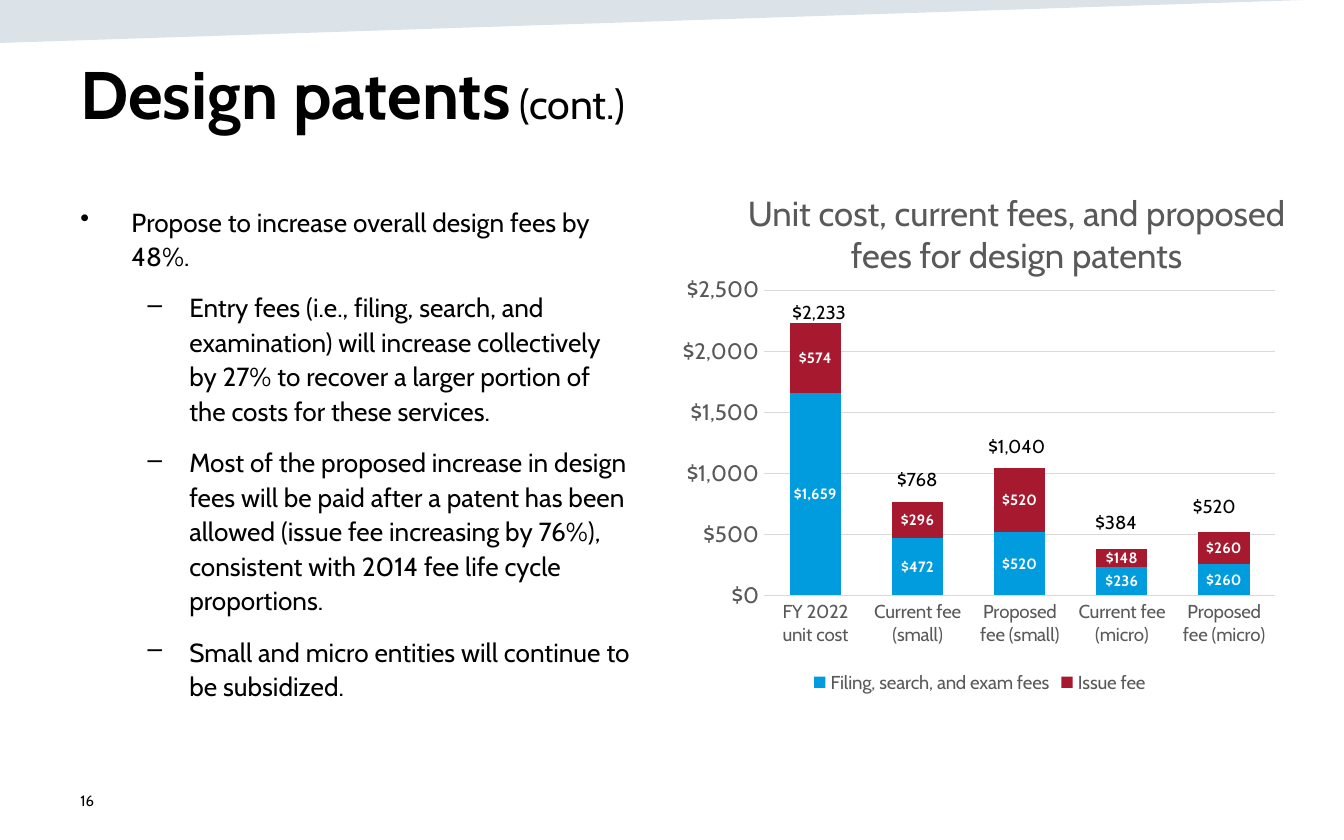
from dataclasses import dataclass

from lxml import etree
from pptx import Presentation
from pptx import util as u
from pptx.chart.data import CategoryChartData
from pptx.dml.color import RGBColor
from pptx.enum import chart as ch
from pptx.enum import text
from pptx.oxml import ns

PX = u.Inches(1) // 100  # 100 px to the inch


@dataclass(frozen=True)
class Theme:
    font: str = "Cabin"
    ink: str = "000000"
    muted: str = "595959"
    grid: str = "D9D9D9"
    band: str = "164469"
    entry: str = "009CDE"
    issue: str = "A6192E"
    white: str = "FFFFFF"
    title: float = 36
    title_note: float = 22
    heading: float = 18.6
    body: float = 14
    axis: float = 12
    label: float = 10
    small: float = 8


THEME = Theme()
DOLLARS = '"$"#,##0'

BULLETS = [
    (0, "Propose to increase overall design fees by 48%."),
    (1, "Entry fees (i.e., filing, search, and examination) will increase collectively \n"
        "by 27% to recover a larger portion of \nthe costs for these services."),
    (1, "Most of the proposed increase in design fees will be paid after a patent has been "
        "allowed (issue fee increasing by 76%), consistent with 2014 fee life cycle proportions."),
    (1, "Small and micro entities will continue to be subsidized."),
]
# Level: left margin px, hanging indent px, bullet
LEVELS = {0: (38, 38, "•"), 1: (81, 31, "–")}

CATEGORIES = ["FY 2022 unit cost", "Current fee (small)", "Proposed fee (small)",
              "Current fee (micro)", "Proposed fee (micro)"]
SERIES = [
    ("Filing, search, and exam fees", THEME.entry, (1659, 472, 520, 236, 260)),
    ("Issue fee", THEME.issue, (574, 296, 520, 148, 260)),
]
TOTAL_TOPS = (219, 343, 319, 375, 363)


def px(*lengths):
    return [u.Emu(length * PX) for length in lengths]


def rgb(colour):
    return RGBColor.from_string(colour)


def style(font, size, colour=THEME.ink, bold=False):
    font.name = THEME.font
    font.size = u.Pt(size)
    font.bold = bold
    font.color.rgb = rgb(colour)


def add_text(page, at, words, size, colour=THEME.ink, align=text.PP_ALIGN.LEFT,
             anchor=text.MSO_ANCHOR.TOP):
    """Add a wrapped box holding one paragraph; return its text frame."""
    frame = page.shapes.add_textbox(*px(*at)).text_frame
    frame.word_wrap = True
    frame.vertical_anchor = anchor
    para = frame.paragraphs[0]
    para.text = words
    para.alignment = align
    for span in para.runs:
        style(span.font, size, colour)
    return frame


def add_band(page):
    builder = page.shapes.build_freeform(0, -1, scale=PX)
    builder.add_line_segments([(0, 32), (1002, -1)], close=True)
    band = builder.convert_to_shape()
    band.shadow.inherit = False
    band.line.fill.background()
    band.fill.solid()
    band.fill.fore_color.rgb = rgb(THEME.band)
    colour = band.fill._xPr.find(".//" + ns.qn("a:srgbClr"))
    etree.SubElement(colour, ns.qn("a:alpha"), val="15000")


def add_title(page):
    para = add_text(page, (50, 34, 900, 104), "Design patents", THEME.title).paragraphs[0]
    para.runs[0].font.bold = True
    note = para.add_run()
    note.text = " (cont.)"
    style(note.font, THEME.title_note)


def add_bullets(page):
    frame = page.shapes.add_textbox(*px(50, 146, 442, 434)).text_frame
    frame.word_wrap = True
    for index, (level, words) in enumerate(BULLETS):
        para = frame.add_paragraph() if index else frame.paragraphs[0]
        para.text = words
        para.level = level
        para.line_spacing = 1.1
        para.space_before = u.Pt(9)
        for span in para.runs:
            style(span.font, THEME.body)
        margin, hang, mark = LEVELS[level]
        props = para._p.get_or_add_pPr()
        props.set("marL", str(margin * PX))
        props.set("indent", str(-hang * PX))
        etree.SubElement(props, ns.qn("a:buChar"), char=mark)


def place_plot(chart, **fractions):
    """Fix the inner plot area as fractions of the chart frame."""
    area = chart._chartSpace.find(".//" + ns.qn("c:plotArea"))
    layout = area.find(ns.qn("c:layout"))
    if layout is None:
        layout = etree.Element(ns.qn("c:layout"))
        area.insert(0, layout)
    manual = etree.SubElement(layout, ns.qn("c:manualLayout"))
    settings = {"layoutTarget": "inner", "xMode": "edge", "yMode": "edge", **fractions}
    for name, value in settings.items():
        etree.SubElement(manual, ns.qn("c:" + name), val=str(value))


def style_axes(chart):
    for axis, size in ((chart.category_axis, THEME.label), (chart.value_axis, THEME.axis)):
        axis.major_tick_mark = axis.minor_tick_mark = ch.XL_TICK_MARK.NONE
        style(axis.tick_labels.font, size, THEME.muted)
    values = chart.value_axis
    values.minimum_scale, values.maximum_scale, values.major_unit = 0, 2500, 500
    values.tick_labels.number_format = DOLLARS
    values.tick_labels.number_format_is_linked = False
    values.format.line.fill.background()
    for line in (values.major_gridlines.format.line, chart.category_axis.format.line):
        line.color.rgb = rgb(THEME.grid)
        line.width = u.Pt(0.75)


def add_fee_chart(page):
    data = CategoryChartData(number_format=DOLLARS)
    data.categories = CATEGORIES
    for name, _, values in SERIES:
        data.add_series(name, values)
    chart = page.shapes.add_chart(ch.XL_CHART_TYPE.COLUMN_STACKED,
                                  *px(500, 200, 458, 320), data).chart
    style(chart.font, THEME.label)
    chart.has_title = False
    chart.has_legend = True
    chart.legend.position = ch.XL_LEGEND_POSITION.BOTTOM
    chart.legend.include_in_layout = False
    style(chart.legend.font, THEME.label, THEME.muted)
    style_axes(chart)
    plot = chart.plots[0]
    plot.gap_width = plot.overlap = 100
    plot.vary_by_categories = False
    for series, (_, colour, _) in zip(plot.series, SERIES):
        series.format.fill.solid()
        series.format.fill.fore_color.rgb = rgb(colour)
        labels = series.data_labels
        labels.show_value = True
        labels.number_format = DOLLARS
        labels.number_format_is_linked = False
        labels.position = ch.XL_LABEL_POSITION.CENTER
        style(labels.font, THEME.small, THEME.white, bold=True)
    place_plot(chart, x=0.15, y=0.05, w=0.83, h=0.71)


def add_totals(page):
    totals = map(sum, zip(*(values for _, _, values in SERIES)))
    for index, (total, top) in enumerate(zip(totals, TOTAL_TOPS)):
        left = round(577 + 73.5 * index)
        add_text(page, (left, top, 65, 27), f"${total:,}", THEME.label,
                 align=text.PP_ALIGN.CENTER)


def main():
    deck = Presentation()
    deck.slide_width, deck.slide_height = px(1000, 625)
    page = deck.slides.add_slide(deck.slide_layouts[6])
    add_band(page)
    add_title(page)
    add_bullets(page)
    add_text(page, (538, 138, 437, 73),
             "Unit cost, current fees, and proposed fees for design patents",
             THEME.heading, THEME.muted, text.PP_ALIGN.CENTER)
    add_fee_chart(page)
    add_totals(page)
    add_text(page, (50, 579, 225, 33), "16", THEME.small, anchor=text.MSO_ANCHOR.MIDDLE)
    deck.save("out.pptx")


if __name__ == "__main__":
    main()
